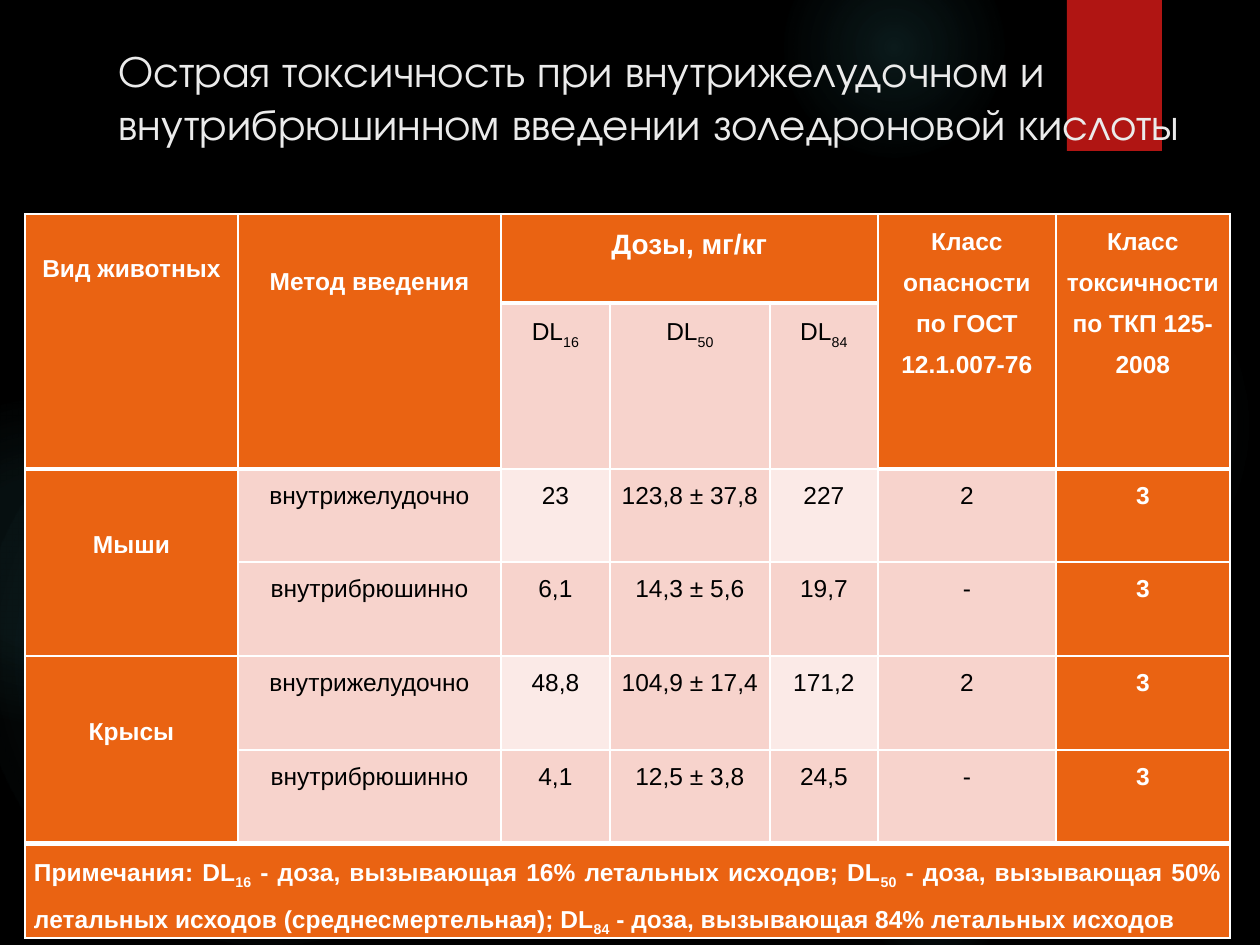
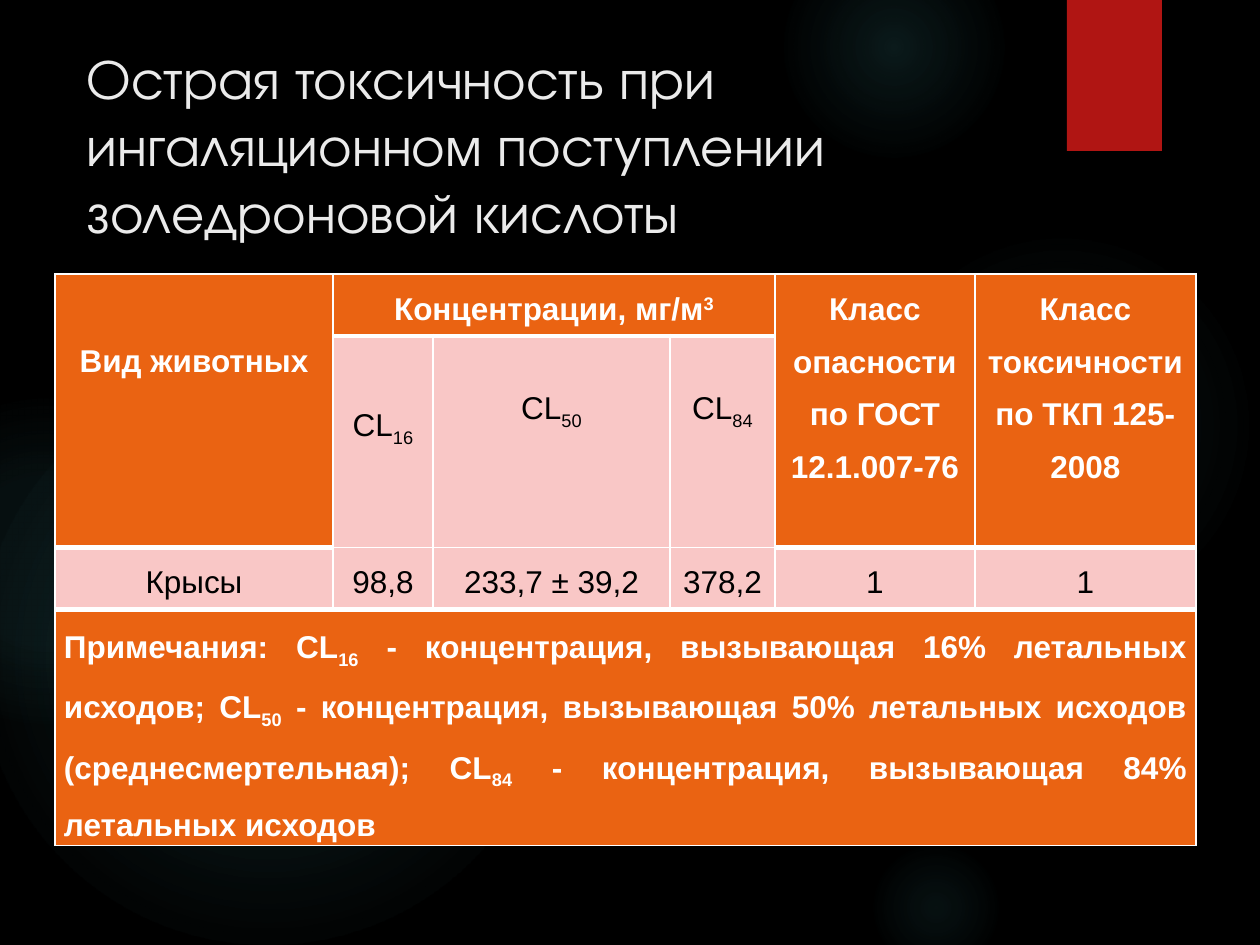
"""Builds two slides with tables on the acute toxicity of zoledronic acid."""
from dataclasses import dataclass
from typing import NamedTuple

import lxml.etree
import pptx
import pptx.dml.color
import pptx.enum.shapes
import pptx.enum.text
import pptx.oxml
import pptx.oxml.ns
import pptx.util

RGB = pptx.dml.color.RGBColor
ALIGN = pptx.enum.text.PP_ALIGN
SHAPE = pptx.enum.shapes.MSO_SHAPE
qn = pptx.oxml.ns.qn

BLACK = RGB(0x00, 0x00, 0x00)
WHITE = RGB(0xFF, 0xFF, 0xFF)
TITLE = RGB(0xEB, 0xEB, 0xEB)
RED = RGB(0xB0, 0x15, 0x13)
TEAL = RGB(0x50, 0xB9, 0xC1)
ORANGE = RGB(0xEA, 0x63, 0x12)
PEACH = RGB(0xF7, 0xD3, 0xCC)
PALE = RGB(0xFB, 0xEA, 0xE7)
PINK = RGB(0xF9, 0xC7, 0xC6)

BODY_FONT = "Arial"
TITLE_FONT = "TeX Gyre Adventor"
EMU_PER_PX = 914400 / 126
SUB, SUPER = -25000, 30000
HAZARD = "Класс опасности по ГОСТ 12.1.007-76"
TOXICITY = "Класс токсичности по ТКП 125-2008"


class Run(NamedTuple):
    text: str
    baseline: int = 0


class Glow(NamedTuple):
    left: int
    top: int
    size: int
    stops: tuple[tuple[int, int], ...]


@dataclass
class Block:
    row: int
    col: int
    runs: list[Run]
    fill: RGB = ORANGE
    rows: int = 1
    cols: int = 1
    drop: int = 0
    size: int = 0
    align: ALIGN = ALIGN.CENTER
    heavy_top: bool = False
    heavy_bottom: bool = False


@dataclass
class Grid:
    left: int
    top: int
    cols: list[int]
    rows: list[int]
    size: int
    blocks: list[Block]


GLOWS = [
    Glow(868, 231, 388, ((0, 7), (36, 6), (69, 0))),
    Glow(784, -63, 220, ((0, 14), (36, 7), (73, 0))),
    Glow(868, 840, 136, ((0, 9), (36, 5), (66, 0))),
    Glow(-21, 368, 577, ((0, 11), (36, 10), (75, 0))),
    Glow(-116, 399, 325, ((0, 8), (36, 8), (72, 0))),
]


def px(n: int) -> pptx.util.Emu:
    return pptx.util.Emu(round(n * EMU_PER_PX))


def add_plain(s, kind: SHAPE, left: int, top: int, width: int, height: int):
    sp = s.shapes.add_shape(kind, px(left), px(top), px(width), px(height))
    sp.shadow.inherit = False
    sp.line.fill.background()
    return sp


def add_glow(s, glow: Glow) -> None:
    sp = add_plain(s, SHAPE.OVAL, glow.left, glow.top, glow.size, glow.size)
    sp.fill.background()
    stops = "".join(
        f'<a:gs pos="{pos * 1000}"><a:srgbClr val="{TEAL}">'
        f'<a:alpha val="{alpha * 1000}"/></a:srgbClr></a:gs>'
        for pos, alpha in glow.stops)
    grad = pptx.oxml.parse_xml(
        f'<a:gradFill {pptx.oxml.ns.nsdecls("a")} rotWithShape="1">'
        f'<a:gsLst>{stops}</a:gsLst><a:path path="circle">'
        '<a:fillToRect l="50000" t="50000" r="50000" b="50000"/>'
        '</a:path></a:gradFill>')
    props = sp.element.spPr
    props.replace(props.find(qn("a:noFill")), grad)


def write_run(p, run: Run, font: str, size: float, color: RGB, bold: bool) -> None:
    r = p.add_run()
    r.text = run.text
    r.font.name = font
    r.font.size = pptx.util.Pt(size)
    r.font.bold = bold
    r.font.color.rgb = color
    if run.baseline:
        r._r.get_or_add_rPr().set("baseline", str(run.baseline))


def add_titled_slide(prs, title: str, left: int, width: int, size: float):
    s = prs.slides.add_slide(prs.slide_layouts[5])
    for glow in GLOWS:
        add_glow(s, glow)
    ribbon = add_plain(s, SHAPE.RECTANGLE, 1067, 0, 95, 151)
    ribbon.fill.solid()
    ribbon.fill.fore_color.rgb = RED

    sp = s.shapes.title
    sp.left, sp.top, sp.width, sp.height = px(left), px(37), px(width), px(147)
    tf = sp.text_frame
    tf.word_wrap = True
    tf.auto_size = pptx.enum.text.MSO_AUTO_SIZE.NONE
    tf.vertical_anchor = pptx.enum.text.MSO_ANCHOR.TOP
    p = tf.paragraphs[0]
    p.alignment = ALIGN.LEFT
    write_run(p, Run(title), TITLE_FONT, size, TITLE, False)
    s.shapes.element.append(sp.element)
    return s


def set_borders(cell, widths: dict[str, int]) -> None:
    props = cell._tc.get_or_add_tcPr()
    for i, (side, points) in enumerate(widths.items()):
        ln = lxml.etree.Element(qn(f"a:ln{side}"), w=str(pptx.util.Pt(points)))
        fill = lxml.etree.SubElement(ln, qn("a:solidFill"))
        lxml.etree.SubElement(fill, qn("a:srgbClr"), val=str(WHITE))
        props.insert(i, ln)


def heavy_edges(blocks: list[Block]) -> set[tuple[int, int]]:
    edges = set()
    for b in blocks:
        for col in range(b.col, b.col + b.cols):
            if b.heavy_top:
                edges.add((b.row, col))
            if b.heavy_bottom:
                edges.add((b.row + b.rows, col))
    return edges


def fill_block(table, b: Block, size: int, heavy: set[tuple[int, int]]) -> None:
    last_row, last_col = b.row + b.rows - 1, b.col + b.cols - 1
    for row in range(b.row, last_row + 1):
        for col in range(b.col, last_col + 1):
            cell = table.cell(row, col)
            cell.fill.solid()
            cell.fill.fore_color.rgb = b.fill
            set_borders(cell, {
                "L": 1, "R": 1,
                "T": 3 if (b.row, col) in heavy else 1,
                "B": 3 if (last_row + 1, col) in heavy else 1})
    cell = table.cell(b.row, b.col)
    if b.rows * b.cols > 1:
        cell.merge(table.cell(last_row, last_col))
    cell.margin_left = cell.margin_right = px(9)
    cell.margin_top, cell.margin_bottom = px(b.drop), 0
    p = cell.text_frame.paragraphs[0]
    p.alignment = b.align
    p.line_spacing = 1.5
    dark = b.fill == ORANGE
    for run in b.runs:
        write_run(p, run, BODY_FONT, b.size or size, WHITE if dark else BLACK, dark)


def add_grid(s, grid: Grid) -> None:
    frame = s.shapes.add_table(
        len(grid.rows), len(grid.cols), px(grid.left), px(grid.top),
        px(sum(grid.cols)), px(sum(grid.rows)))
    table = frame.table
    table.first_row = table.horz_banding = False
    for column, width in zip(table.columns, grid.cols):
        column.width = px(width)
    for row, height in zip(table.rows, grid.rows):
        row.height = px(height)
    heavy = heavy_edges(grid.blocks)
    for b in grid.blocks:
        fill_block(table, b, grid.size, heavy)


def header(col: int, text: str, drop: int = 0) -> Block:
    return Block(0, col, [Run(text)], rows=2, drop=drop, heavy_bottom=True)


def level_heads(symbol: str, first_col: int, fill: RGB, drops: list[int]) -> list[Block]:
    return [Block(1, first_col + i, [Run(symbol), Run(level, SUB)], fill, drop=drop)
            for i, (level, drop) in enumerate(zip(("16", "50", "84"), drops))]


def note(row: int, cols: int, symbol: str, noun: str) -> Block:
    runs = []
    lead = "Примечания: "
    for level, tail in (("16", "; "), ("50", " (среднесмертельная); "), ("84", "")):
        runs += [Run(lead + symbol), Run(level, SUB)]
        lead = f" - {noun}, вызывающая {level}% летальных исходов{tail}"
    runs.append(Run(lead))
    return Block(row, 0, runs, cols=cols, align=ALIGN.JUSTIFY, heavy_top=True)


def dose_blocks() -> list[Block]:
    blocks = [
        header(0, "Вид животных", 28),
        header(1, "Метод введения", 41),
        Block(0, 2, [Run("Дозы, мг/кг")], cols=3, size=16, heavy_bottom=True),
        header(5, HAZARD),
        header(6, TOXICITY),
        *level_heads("DL", 2, PEACH, [0, 0, 0]),
        Block(2, 0, [Run("Мыши")], rows=2, drop=49),
        Block(4, 0, [Run("Крысы")], rows=2, drop=49),
        note(6, 7, "DL", "доза"),
    ]
    values = [
        ("внутрижелудочно", "23", "123,8 ± 37,8", "227", "2", "3"),
        ("внутрибрюшинно", "6,1", "14,3 ± 5,6", "19,7", "-", "3"),
        ("внутрижелудочно", "48,8", "104,9 ± 17,4", "171,2", "2", "3"),
        ("внутрибрюшинно", "4,1", "12,5 ± 3,8", "24,5", "-", "3"),
    ]
    for row, texts in enumerate(values, 2):
        for col, text in enumerate(texts, 1):
            pale = row % 2 == 0 and col in (2, 4)
            fill = ORANGE if col == 6 else PALE if pale else PEACH
            blocks.append(Block(row, col, [Run(text)], fill))
    return blocks


def concentration_blocks() -> list[Block]:
    values = ("Крысы", "98,8", "233,7 ± 39,2", "378,2", "1", "1")
    return [
        header(0, "Вид животных", 52),
        Block(0, 1, [Run("Концентрации, мг/м"), Run("3", SUPER)], cols=3,
              heavy_bottom=True),
        header(4, HAZARD),
        header(5, TOXICITY),
        *level_heads("СL", 1, PINK, [52, 35, 35]),
        *(Block(2, col, [Run(text)], PINK) for col, text in enumerate(values)),
        note(3, 6, "СL", "концентрация"),
    ]


def main() -> None:
    prs = pptx.Presentation()
    prs.slide_width, prs.slide_height = px(1260), px(945)
    background = prs.slide_master.background.fill
    background.solid()
    background.fore_color.rgb = BLACK

    s = add_titled_slide(
        prs, "Острая токсичность при внутрижелудочном и внутрибрюшинном "
        "введении золедроновой кислоты", 106, 1134, 25.2)
    add_grid(s, Grid(25, 214, [213, 263, 109, 160, 108, 178, 174],
                     [89, 166, 93, 94, 94, 94, 94], 14, dose_blocks()))

    s = add_titled_slide(
        prs, "Острая токсичность при ингаляционном поступлении "
        "золедроновой кислоты", 74, 1040, 32)
    add_grid(s, Grid(55, 274, [278, 100, 237, 105, 200, 221],
                     [62, 211, 62, 236], 18, concentration_blocks()))
    prs.save("out.pptx")


if __name__ == "__main__":
    main()
